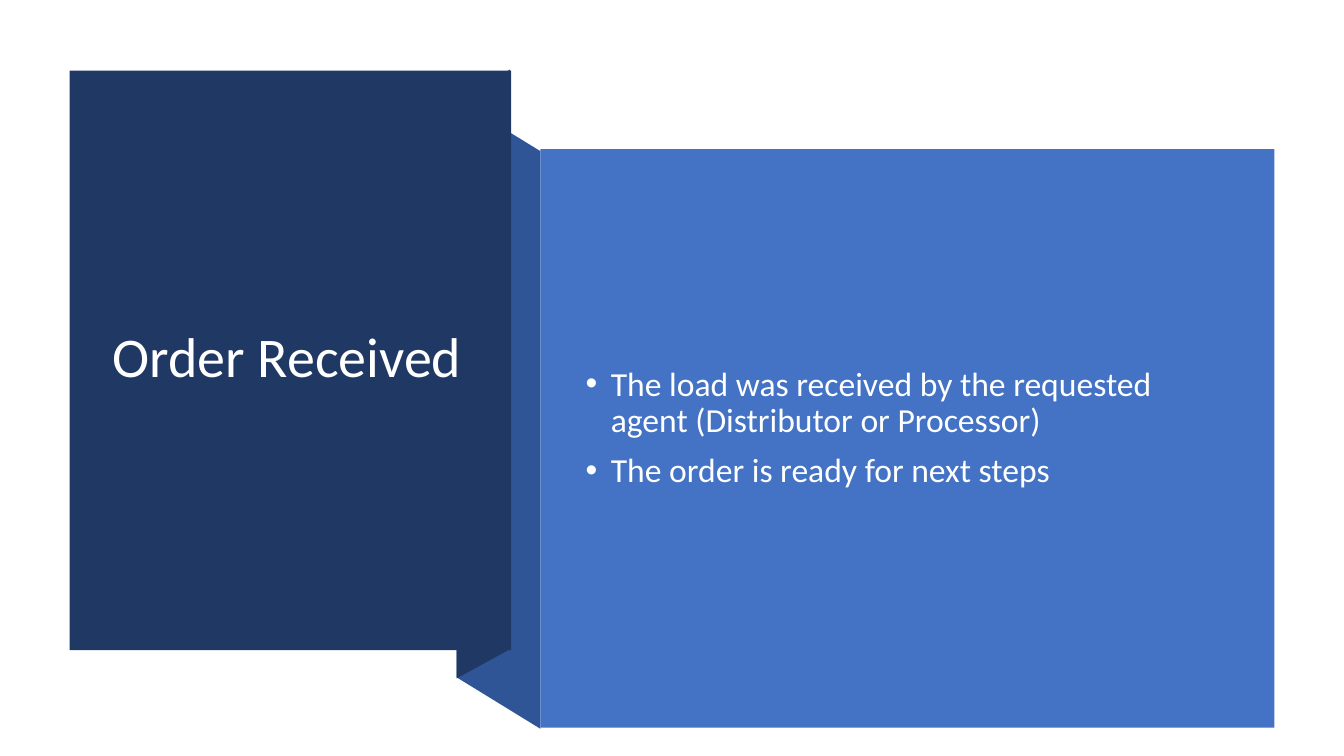
"""Build the "Order Received" slide with its folded ribbon panel."""
from dataclasses import dataclass

from lxml.etree import SubElement
from pptx import Presentation
from pptx.dml.color import RGBColor as RGB
from pptx.enum.shapes import MSO_SHAPE as SHAPE
from pptx.enum.text import MSO_ANCHOR as ANCHOR
from pptx.oxml.ns import qn
from pptx.util import Inches, Pt


@dataclass(frozen=True)
class Theme:
    font: str = "Calibri"
    navy: str = "203864"
    fold: str = "2F5597"
    panel: str = "4472C4"
    title_text: str = "FFFFFF"
    body_text: str = "FEFFFF"
    title_size: int = 40
    body_size: int = 24


def write(p, text, *, font, size, color, bullet=None, before=0):
    """Fill paragraph p with text in the given format."""
    if bullet:
        pPr = p._p.get_or_add_pPr()
        pPr.set("marL", str(Inches(0.25)))
        pPr.set("indent", str(-Inches(0.25)))
        SubElement(pPr, qn("a:buFont"), typeface="Arial")
        SubElement(pPr, qn("a:buChar"), char=bullet)
    p.line_spacing = 0.9
    p.space_before = Pt(before)
    r = p.add_run()
    r.text = text
    r.font.name = font
    r.font.size = Pt(size)
    r.font.color.rgb = RGB.from_string(color)


class Deck:
    def __init__(self, theme):
        self.theme = theme
        self.prs = Presentation()
        self.prs.slide_width, self.prs.slide_height = Inches(13.33), Inches(7.5)
        self.s = self.prs.slides.add_slide(self.prs.slide_layouts[6])

    def paint(self, sp, color):
        """Give sp a flat fill with no line or shadow."""
        sp.shadow.inherit = False
        sp.fill.solid()
        sp.fill.fore_color.rgb = RGB.from_string(color)
        sp.line.fill.background()

    def rect(self, x, y, w, h, color):
        """Add a plain rectangle."""
        sp = self.s.shapes.add_shape(
            SHAPE.RECTANGLE, Inches(x), Inches(y), Inches(w), Inches(h))
        self.paint(sp, color)

    def band(self, left, right, left_top, right_top, height, color):
        """Add an upright band whose top and bottom edges slant alike."""
        corners = [(left, left_top), (right, right_top),
                   (right, right_top + height), (left, left_top + height)]
        start, *rest = [(Inches(x), Inches(y)) for x, y in corners]
        builder = self.s.shapes.build_freeform(*start, scale=1.0)
        builder.add_line_segments(rest, close=True)
        self.paint(builder.convert_to_shape(), color)

    def text(self, x, y, w, h, lines, gap=0, **fmt):
        """Add a vertically centred text box, one paragraph per line."""
        sp = self.s.shapes.add_textbox(Inches(x), Inches(y), Inches(w), Inches(h))
        tf = sp.text_frame
        tf.word_wrap = True
        tf.vertical_anchor = ANCHOR.MIDDLE
        for i, line in enumerate(lines):
            p = tf.add_paragraph() if i else tf.paragraphs[0]
            write(p, line, font=self.theme.font, before=gap if i else 0, **fmt)


def main():
    t = Theme()
    deck = Deck(t)
    deck.band(4.53, 5.36, 0.99, 1.5, 5.73, t.fold)
    deck.band(4.53, 5.06, 0.98, 0.69, 5.75, t.navy)
    deck.rect(0.69, 0.7, 4.38, 5.75, t.navy)
    deck.text(1.02, 1.07, 3.71, 4.99, ["Order Received"],
              size=t.title_size, color=t.title_text)
    deck.rect(5.36, 1.48, 7.28, 5.74, t.panel)
    deck.text(5.71, 1.88, 6.51, 4.74, [
        "The load was received by the requested agent (Distributor or Processor)",
        "The order is ready for next steps",
    ], gap=10, size=t.body_size, color=t.body_text, bullet="•")
    deck.prs.save("out.pptx")


if __name__ == "__main__":
    main()
